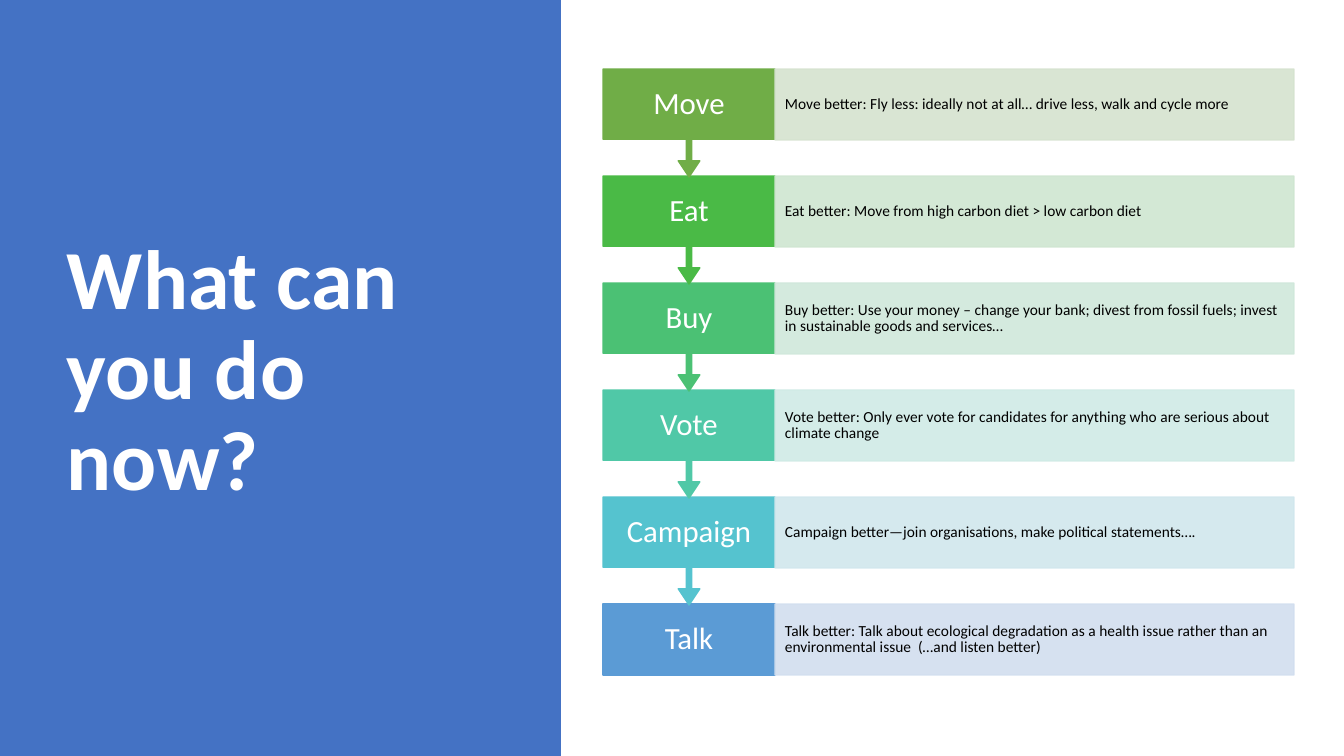
from dataclasses import dataclass
from lxml.etree import SubElement as Sub
from pptx import Presentation
from pptx.dml.color import RGBColor as Rgb
from pptx.enum.shapes import MSO_SHAPE as Kind
from pptx.enum.text import MSO_ANCHOR as Anchor, PP_ALIGN as Align
from pptx.oxml.ns import qn
from pptx.util import Pt

SCALE = 914400 / 100.8


@dataclass(frozen=True)
class Theme:
    font: str = "Calibri"
    panel: str = "4472C4"
    light: str = "FFFFFF"
    dark: str = "000000"
    title: int = 60
    label: int = 22
    body: int = 11
    alpha: int = 90


@dataclass(frozen=True)
class Step:
    name: str
    color: str
    tint: str
    advice: str


@dataclass(frozen=True)
class Box:
    left: int
    top: int
    width: int
    height: int

    def emu(self):
        return [px(n) for n in (self.left, self.top, self.width, self.height)]


THEME = Theme()
STEPS = [
    Step("Move", "70AD47", "D5E3CF",
         "Move better: Fly less: ideally not at all… drive less, walk and cycle more"),
    Step("Eat", "4ABA46", "CFE6D1",
         "Eat better: Move from high carbon diet > low carbon diet"),
    Step("Buy", "4BC174", "D0E8DB",
         "Buy better: Use your money – change your bank; divest from fossil fuels; "
         "invest in sustainable goods and services…"),
    Step("Vote", "50C8A7", "D0EBE6",
         "Vote better: Only ever vote for candidates for anything who are serious "
         "about climate change"),
    Step("Campaign", "55C3CF", "D1E7ED",
         "Campaign better—join organisations, make political statements…."),
    Step("Talk", "5B9BD5", "D2DEEF",
         "Talk better: Talk about ecological degradation as a health issue rather "
         "than an environmental issue  (…and listen better)"),
]


def px(n):
    return round(n * SCALE)


def write(shape, text, size, color=THEME.light, bold=False, align=Align.LEFT,
          pad=(10, 5)):
    frame = shape.text_frame
    frame.word_wrap = True
    frame.vertical_anchor = Anchor.MIDDLE
    frame.margin_left = frame.margin_right = px(pad[0])
    frame.margin_top = frame.margin_bottom = px(pad[1])
    para = frame.paragraphs[0]
    para.alignment = align
    para.line_spacing = 0.9
    run = para.add_run()
    run.text = text
    font = run.font
    font.name, font.size, font.bold = THEME.font, Pt(size), bold
    font.color.rgb = Rgb.from_string(color)


def block(slide, box, color, kind=Kind.RECTANGLE, alpha=100, edge=True):
    shape = slide.shapes.add_shape(kind, *box.emu())
    shape.shadow.inherit = False
    fills = [shape.fill]
    if edge:
        shape.line.width = Pt(1)
        fills.append(shape.line.fill)
    else:
        shape.line.fill.background()
    for fill in fills:
        fill.solid()
        fill.fore_color.rgb = Rgb.from_string(color)
    if alpha < 100:
        for node in shape._element.spPr.iter(qn("a:srgbClr")):
            Sub(node, qn("a:alpha")).set("val", str(alpha * 1000))
    return shape


def panel(slide, box):
    block(slide, box, THEME.panel, edge=False)
    area = Box(box.left + 57, box.top + 69, box.width - 142, box.height - 149)
    title = slide.shapes.add_textbox(*area.emu())
    write(title, "What can you do now?", THEME.title, bold=True)


def row(slide, box, step, pitch, last):
    side = box.width // 4
    head = Box(box.left, box.top, side, box.height)
    if last:
        block(slide, head, step.color)
    else:
        tall = Box(box.left, box.top, side, pitch + 1)
        arrow = block(slide, tall, step.color, Kind.UP_ARROW_CALLOUT)
        arrow.rotation = 180
        for i, value in enumerate((0.05, 0.1, 0.15, 0.65)):
            arrow.adjustments[i] = value
    label = slide.shapes.add_textbox(*head.emu())
    write(label, step.name, THEME.label, align=Align.CENTER, pad=(12, 17))
    rest = Box(box.left + side, box.top, box.width - side, box.height)
    strip = block(slide, rest, step.tint, alpha=THEME.alpha)
    write(strip, step.advice, THEME.body, THEME.dark, pad=(10, 15))


def flow(slide, box):
    tall = 71
    last = len(STEPS) - 1
    pitch = (box.height - tall) // last
    for i, step in reversed(list(enumerate(STEPS))):
        place = Box(box.left, box.top + i * pitch, box.width, tall)
        row(slide, place, step, pitch, i == last)


def main():
    deck = Presentation()
    deck.slide_width, deck.slide_height = px(1344), px(756)
    slide = deck.slides.add_slide(deck.slide_layouts[6])
    panel(slide, Box(0, 0, 561, 756))
    flow(slide, Box(603, 69, 691, 606))
    deck.save("out.pptx")


if __name__ == "__main__":
    main()
